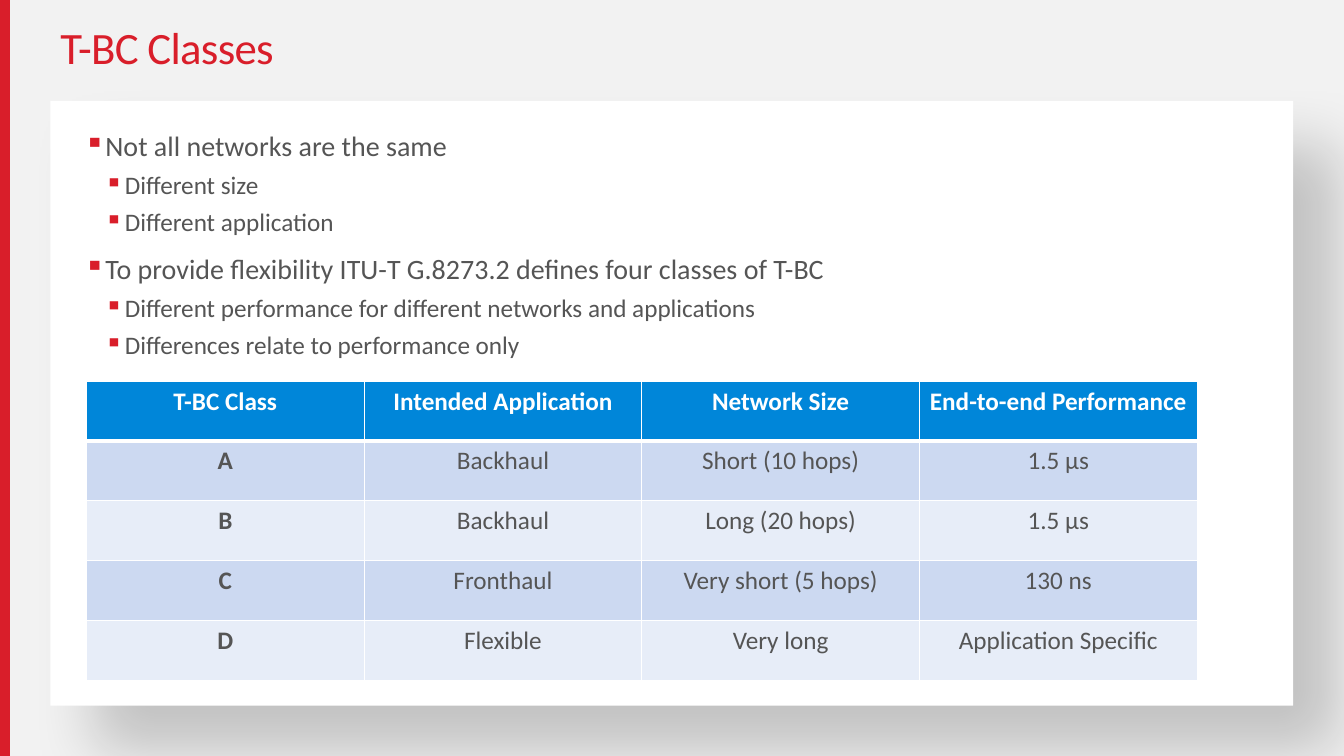
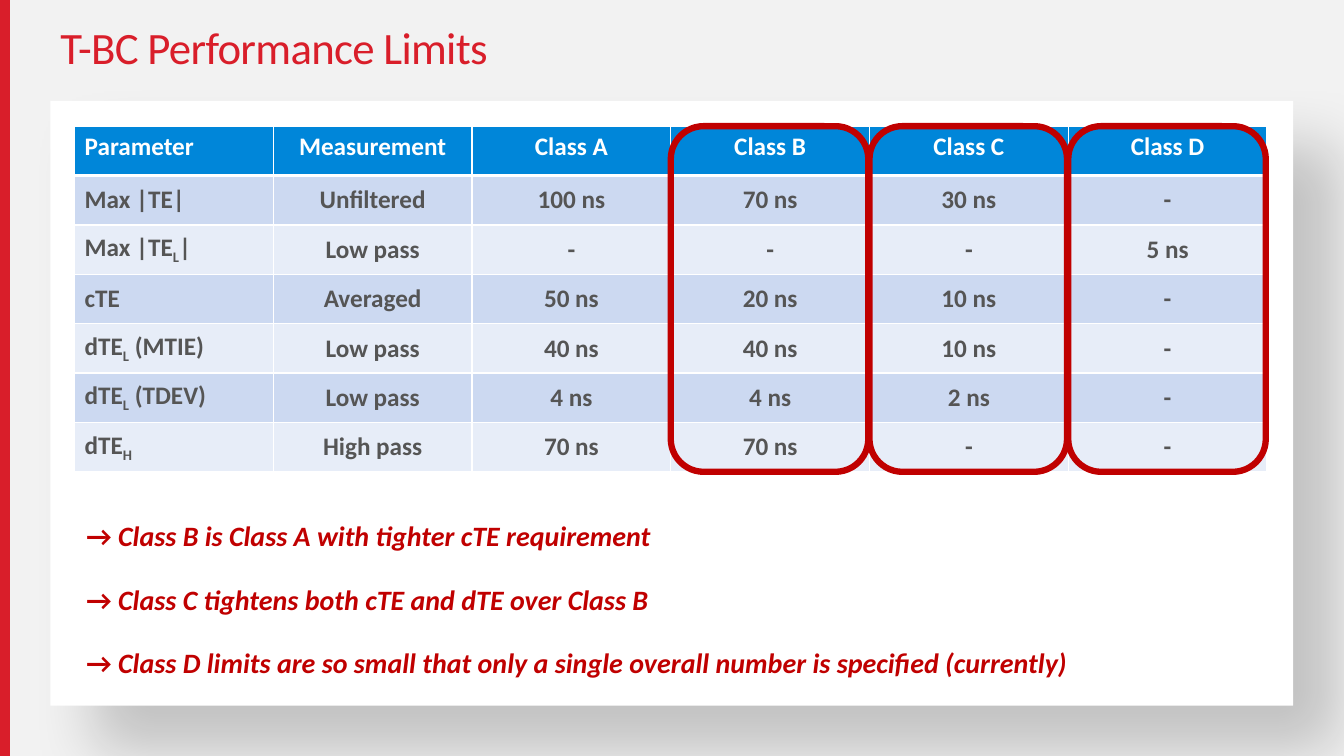
from lxml import etree
from pptx import Presentation
from pptx.dml.color import RGBColor
from pptx.enum.shapes import MSO_SHAPE
from pptx.enum.text import MSO_ANCHOR, MSO_AUTO_SIZE, PP_ALIGN
from pptx.oxml.ns import qn
from pptx.util import Cm, Pt

RECT = MSO_SHAPE.RECTANGLE
ROUND_RECT = MSO_SHAPE.ROUNDED_RECTANGLE
LEFT = PP_ALIGN.LEFT
CENTER = PP_ALIGN.CENTER
TOP = MSO_ANCHOR.TOP
MIDDLE = MSO_ANCHOR.MIDDLE
NO_AUTOSIZE = MSO_AUTO_SIZE.NONE

RED = RGBColor(0xD9, 0x1E, 0x2A)
DARK_RED = RGBColor(0xC0, 0x00, 0x00)
BLUE = RGBColor(0x00, 0x86, 0xD9)
ROW_DARK = RGBColor(0xCC, 0xD9, 0xF1)
ROW_LIGHT = RGBColor(0xE7, 0xED, 0xF8)
GREY = RGBColor(0x55, 0x55, 0x55)
PALE = RGBColor(0xF2, 0xF2, 0xF2)
WHITE = RGBColor(0xFF, 0xFF, 0xFF)
BLACK = RGBColor(0x00, 0x00, 0x00)

FONT = "Calibri"
SLIDE_W, SLIDE_H = 33.87, 19.05
TITLE_BOX = (1.27, 0, 31.32, 2.54)
PANEL_BOX = (1.27, 2.54, 31.32, 15.24)
BODY_BOX = (1.88, 3.18, 30.05, 13.97)
CLASS_BOX = (2.18, 9.6, 27.99, 7.55)
LIMIT_BOX = (1.88, 3.18, 30.05, 8.71)
NOTE_BOX = (1.93, 12.93, 30.02, 1.12)
NOTE_STEP = 1.6

BULLETS = [
    (0, "Not all networks are the same"),
    (1, "Different size"),
    (1, "Different application"),
    (0, "To provide flexibility ITU-T G.8273.2 defines four classes of T-BC"),
    (1, "Different performance for different networks and applications"),
    (1, "Differences relate to performance only"),
]
CLASSES = [
    ["T-BC Class", "Intended Application", "Network Size", "End-to-end Performance"],
    ["A", "Backhaul", "Short (10 hops)", "1.5 µs"],
    ["B", "Backhaul", "Long (20 hops)", "1.5 µs"],
    ["C", "Fronthaul", "Very short (5 hops)", "130 ns"],
    ["D", "Flexible", "Very long", "Application Specific"],
]
LIMITS = [
    ["Parameter", "Measurement", "Class A", "Class B", "Class C", "Class D"],
    ["Max |TE|", "Unfiltered", "100 ns", "70 ns", "30 ns", "-"],
    [("Max |TE", "L", "|"), "Low pass", "-", "-", "-", "5 ns"],
    ["cTE", "Averaged", "50 ns", "20 ns", "10 ns", "-"],
    [("dTE", "L", " (MTIE)"), "Low pass", "40 ns", "40 ns", "10 ns", "-"],
    [("dTE", "L", " (TDEV)"), "Low pass", "4 ns", "4 ns", "2 ns", "-"],
    [("dTE", "H"), "High pass", "70 ns", "70 ns", "-", "-"],
]
NOTES = [
    "Class B is Class A with tighter cTE requirement",
    "Class C tightens both cTE and dTE over Class B",
    "Class D limits are so small that only a single overall number is specified (currently)",
]


def cm_box(box):
    return [Cm(v) for v in box]


def add_run(p, text, size, color, bold=False, italic=False):
    r = p.add_run()
    r.text = text
    r.font.name = FONT
    r.font.size = Pt(size)
    r.font.color.rgb = color
    r.font.bold = bold
    r.font.italic = italic
    return r


def add_box(s, kind, box, fill=None, line=None, width=0):
    sp = s.shapes.add_shape(kind, *cm_box(box))
    sp.shadow.inherit = False
    if fill is None:
        sp.fill.background()
    else:
        sp.fill.solid()
        sp.fill.fore_color.rgb = fill
    if line is None:
        sp.line.fill.background()
    else:
        sp.line.color.rgb = line
        sp.line.width = Pt(width)
    return sp


def add_shadow(sp):
    effects = sp.element.spPr.find(qn("a:effectLst"))
    shadow = etree.SubElement(
        effects, qn("a:outerShdw"), blurRad=str(Pt(45)), dist=str(Pt(45)),
        dir="2700000", algn="tl", rotWithShape="0")
    color = etree.SubElement(shadow, qn("a:srgbClr"), val=str(BLACK))
    etree.SubElement(color, qn("a:alpha"), val="20000")


def add_slide(prs, title):
    s = prs.slides.add_slide(prs.slide_layouts[5])
    s.background.fill.solid()
    s.background.fill.fore_color.rgb = PALE
    add_box(s, RECT, (0, 0, 0.25, SLIDE_H), RED)
    add_shadow(add_box(s, RECT, PANEL_BOX, WHITE))
    sp = s.shapes.title
    sp.left, sp.top, sp.width, sp.height = cm_box(TITLE_BOX)
    tf = sp.text_frame
    tf.auto_size = NO_AUTOSIZE
    tf.vertical_anchor = MIDDLE
    p = tf.paragraphs[0]
    p.alignment = LEFT
    p.line_spacing = 0.9
    r = add_run(p, title, 32, RED)
    r.font._element.set("spc", "-50")
    return s


def add_text_box(s, box, anchor=TOP):
    tf = s.shapes.add_textbox(*cm_box(box)).text_frame
    tf.word_wrap = True
    tf.vertical_anchor = anchor
    return tf


def add_bullets(s, box, items):
    tf = add_text_box(s, box)
    for i, (level, text) in enumerate(items):
        p = tf.paragraphs[0] if i == 0 else tf.add_paragraph()
        p.level = level
        pPr = p._p.get_or_add_pPr()
        pPr.set("marL", str(Cm(0.51 * (level + 1))))
        pPr.set("indent", str(Cm(-0.51)))
        color = etree.SubElement(pPr, qn("a:buClr"))
        etree.SubElement(color, qn("a:srgbClr"), val=str(RED))
        etree.SubElement(pPr, qn("a:buChar"), char="▪")
        p.line_spacing = 0.95
        if i:
            p.space_before = Pt(6 if level else 12)
        add_run(p, text, 18 if level else 20, GREY)


def set_borders(cell, top, bottom):
    tcPr = cell._tc.get_or_add_tcPr()
    widths = {"a:lnL": 1, "a:lnR": 1, "a:lnT": top, "a:lnB": bottom}
    for i, (tag, width) in enumerate(widths.items()):
        ln = etree.Element(qn(tag), w=str(Pt(width)))
        fill = etree.SubElement(ln, qn("a:solidFill"))
        etree.SubElement(fill, qn("a:srgbClr"), val=str(WHITE))
        tcPr.insert(i, ln)


def add_table(s, box, rows, bold_cols, left_cols=0, anchor=TOP):
    n_rows, n_cols = len(rows), len(rows[0])
    table = s.shapes.add_table(n_rows, n_cols, *cm_box(box)).table
    table.horz_banding = False
    for col in table.columns:
        col.width = Cm(box[2] / n_cols)
    for row in table.rows:
        row.height = Cm(box[3] / n_rows)
    for i, row in enumerate(rows):
        header = i == 0
        fill = BLUE if header else ROW_DARK if i % 2 else ROW_LIGHT
        for j, text in enumerate(row):
            cell = table.cell(i, j)
            cell.fill.solid()
            cell.fill.fore_color.rgb = fill
            cell.vertical_anchor = TOP if header else anchor
            set_borders(cell, 3 if i == 1 else 1, 3 if header else 1)
            p = cell.text_frame.paragraphs[0]
            p.alignment = LEFT if j < left_cols else CENTER
            parts = (text,) if isinstance(text, str) else text
            for k, part in enumerate(parts):
                r = add_run(p, part, 18, WHITE if header else GREY,
                            header or j < bold_cols)
                if k % 2:
                    r.font._element.set("baseline", "-25000")


def add_class_frames(s, box):
    left, top, width, height = box
    step = width / 6
    for col in range(3, 6):
        add_box(s, ROUND_RECT, (left + col * step, top, step - 0.03, height),
                line=DARK_RED, width=4.5)


def add_notes_list(s, box, notes):
    left, top, width, height = box
    for i, note in enumerate(notes):
        tf = add_text_box(s, (left, top + i * NOTE_STEP, width, height), MIDDLE)
        p = tf.paragraphs[0]
        add_run(p, "→ ", 20, DARK_RED, bold=True)
        add_run(p, note, 20, DARK_RED, bold=True, italic=True)


def build_classes(prs):
    s = add_slide(prs, "T-BC Classes")
    add_bullets(s, BODY_BOX, BULLETS)
    add_table(s, CLASS_BOX, CLASSES, bold_cols=1)


def build_limits(prs):
    s = add_slide(prs, "T-BC Performance Limits")
    add_table(s, LIMIT_BOX, LIMITS, bold_cols=6, left_cols=1, anchor=MIDDLE)
    add_class_frames(s, LIMIT_BOX)
    add_notes_list(s, NOTE_BOX, NOTES)


def main():
    prs = Presentation()
    prs.slide_width = Cm(SLIDE_W)
    prs.slide_height = Cm(SLIDE_H)
    build_classes(prs)
    build_limits(prs)
    prs.save("out.pptx")


if __name__ == "__main__":
    main()
